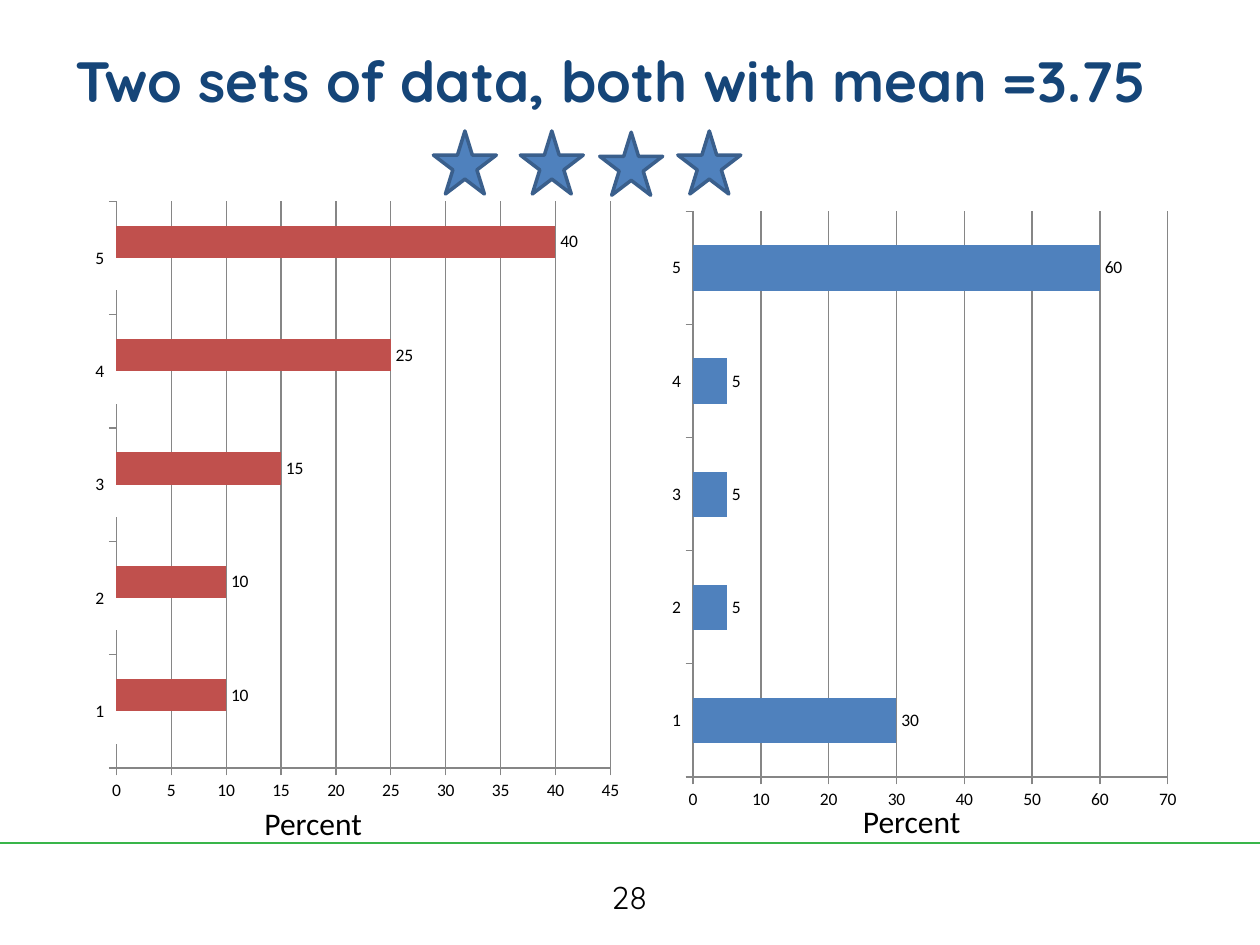
from lxml.etree import SubElement
from pptx import Presentation
from pptx.chart.data import CategoryChartData
from pptx.dml.color import RGBColor
from pptx.enum.chart import XL_CHART_TYPE as ChartType
from pptx.enum.chart import XL_LABEL_POSITION as LabelPosition
from pptx.enum.chart import XL_TICK_MARK as TickMark
from pptx.enum.shapes import MSO_CONNECTOR as Connector
from pptx.enum.shapes import MSO_SHAPE as ShapeType
from pptx.enum.text import MSO_ANCHOR as Anchor
from pptx.enum.text import PP_ALIGN as Align
from pptx.oxml.ns import qn
from pptx.util import Inches, Pt

COLORS = {
    "title": "154578", "text": "000000", "rule": "39B54A", "grid": "868686",
    "blue": "4F81BD", "red": "C0504D", "hidden": "FFFFFF", "star_edge": "3A5F8C",
}
HEADING_FONT, BODY_FONT = "Quicksand", "Calibri"
RATINGS = ["1", "2", "3", "4", "5"]


def color(name):
    return RGBColor.from_string(COLORS[name])


def style_font(font, name, size, color_name="text", bold=False):
    font.name, font.size, font.bold = name, Pt(size), bold
    font.color.rgb = color(color_name)


def place(shape, left, top, width, height):
    shape.left, shape.top = Inches(left), Inches(top)
    shape.width, shape.height = Inches(width), Inches(height)


def set_title(slide, text):
    title = slide.shapes.title
    place(title, 0.5, 0.3, 9, 1.25)
    frame = title.text_frame
    frame.word_wrap = True
    frame.vertical_anchor = Anchor.TOP
    frame.margin_top = Inches(0.06)
    paragraph = frame.paragraphs[0]
    paragraph.alignment = Align.LEFT
    run = paragraph.add_run()
    run.text = text
    style_font(run.font, HEADING_FONT, 32.4, "title", bold=True)


def add_text(slide, text, box, font_name, alignment=Align.LEFT):
    frame = slide.shapes.add_textbox(*map(Inches, box)).text_frame
    frame.word_wrap = True
    paragraph = frame.paragraphs[0]
    paragraph.alignment = alignment
    run = paragraph.add_run()
    run.text = text
    style_font(run.font, font_name, 18)


def add_rule(slide, top):
    rule = slide.shapes.add_connector(
        Connector.STRAIGHT, 0, Inches(top), Inches(10), Inches(top))
    rule.line.color.rgb = color("rule")
    rule.line.width = Pt(1.5)
    SubElement(rule._element.spPr, qn("a:effectLst"))


def add_star(slide, left, top):
    star = slide.shapes.add_shape(
        ShapeType.STAR_5_POINT, Inches(left), Inches(top), Inches(0.5), Inches(0.5))
    star.shadow.inherit = False
    star.fill.solid()
    star.fill.fore_color.rgb = color("blue")
    star.line.color.rgb = color("star_edge")
    star.line.width = Pt(2)


def style_axis(axis):
    axis.major_tick_mark = TickMark.OUTSIDE
    axis.minor_tick_mark = TickMark.NONE
    axis.format.line.color.rgb = color("grid")
    axis.format.line.width = Pt(0.75)


def add_bar_chart(slide, box, series_list, maximum, step):
    """Draw (values, color name) series; the last one carries value labels."""
    data = CategoryChartData()
    data.categories = RATINGS
    for number, (values, _) in enumerate(series_list, 1):
        data.add_series(f"Series {number}", values)
    chart = slide.shapes.add_chart(
        ChartType.BAR_CLUSTERED, *map(Inches, box), data).chart
    chart.has_legend = False
    chart.has_title = False
    style_font(chart.font, BODY_FONT, 10)

    # Axes and gridlines
    style_axis(chart.category_axis)
    value_axis = chart.value_axis
    style_axis(value_axis)
    value_axis.minimum_scale, value_axis.maximum_scale = 0, maximum
    value_axis.major_unit = step
    value_axis.has_major_gridlines = True
    grid_line = value_axis.major_gridlines.format.line
    grid_line.color.rgb = color("grid")
    grid_line.width = Pt(0.75)

    # Bars and labels
    plot = chart.plots[0]
    plot.gap_width = 150
    plot.vary_by_categories = False
    for series, (_, color_name) in zip(plot.series, series_list):
        series.invert_if_negative = False
        series.format.fill.solid()
        series.format.fill.fore_color.rgb = color(color_name)
    labels = plot.series[len(series_list) - 1].data_labels
    labels.show_value = True
    labels.position = LabelPosition.OUTSIDE_END
    style_font(labels.font, BODY_FONT, 10)


def main():
    presentation = Presentation()
    presentation.slide_width, presentation.slide_height = Inches(10), Inches(7.5)
    slide = presentation.slides.add_slide(presentation.slide_layouts[5])

    # Footer and title
    add_rule(slide, 6.69)
    add_text(slide, "28", (3.83, 6.92, 2.33, 0.4), HEADING_FONT, Align.CENTER)
    set_title(slide, "Two sets of data, both with mean =3.75")

    # Rating distributions
    add_bar_chart(slide, (0.67, 1.5, 4.33, 4.95),
                  [((5, 4, 3, 2, 1), "hidden"), ((10, 10, 15, 25, 40), "red")], 45, 5)
    add_text(slide, "Percent", (2, 6.33, 1.42, 0.4), BODY_FONT)
    add_bar_chart(slide, (5.25, 1.58, 4.17, 4.94),
                  [((30, 5, 5, 5, 60), "blue")], 70, 10)
    add_text(slide, "Percent", (6.75, 6.32, 1.42, 0.4), BODY_FONT)

    # Star rating
    for left, top in ((3.44, 1.04), (4.13, 1.04), (4.76, 1.05), (5.38, 1.04)):
        add_star(slide, left, top)

    presentation.save("out.pptx")


if __name__ == "__main__":
    main()
